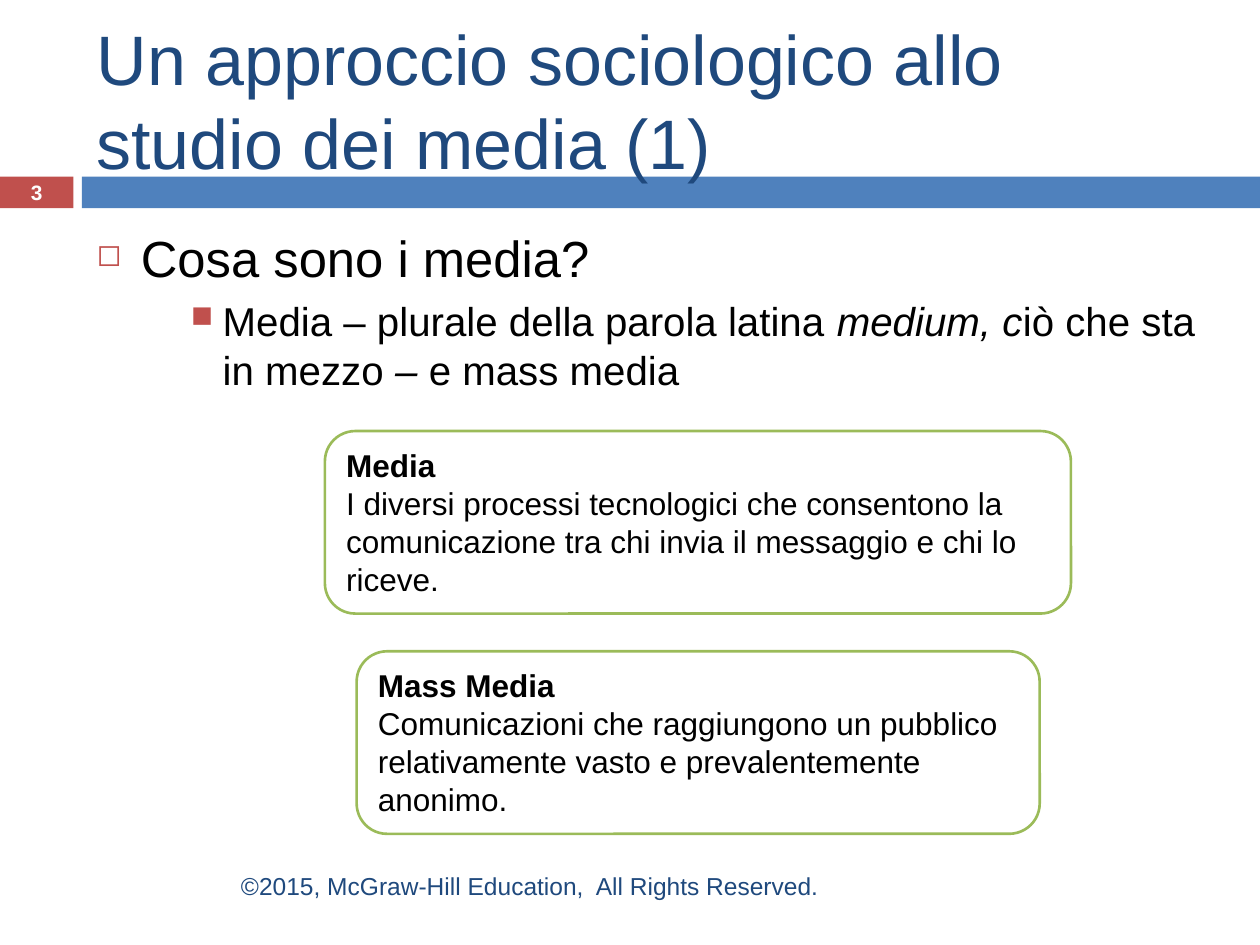
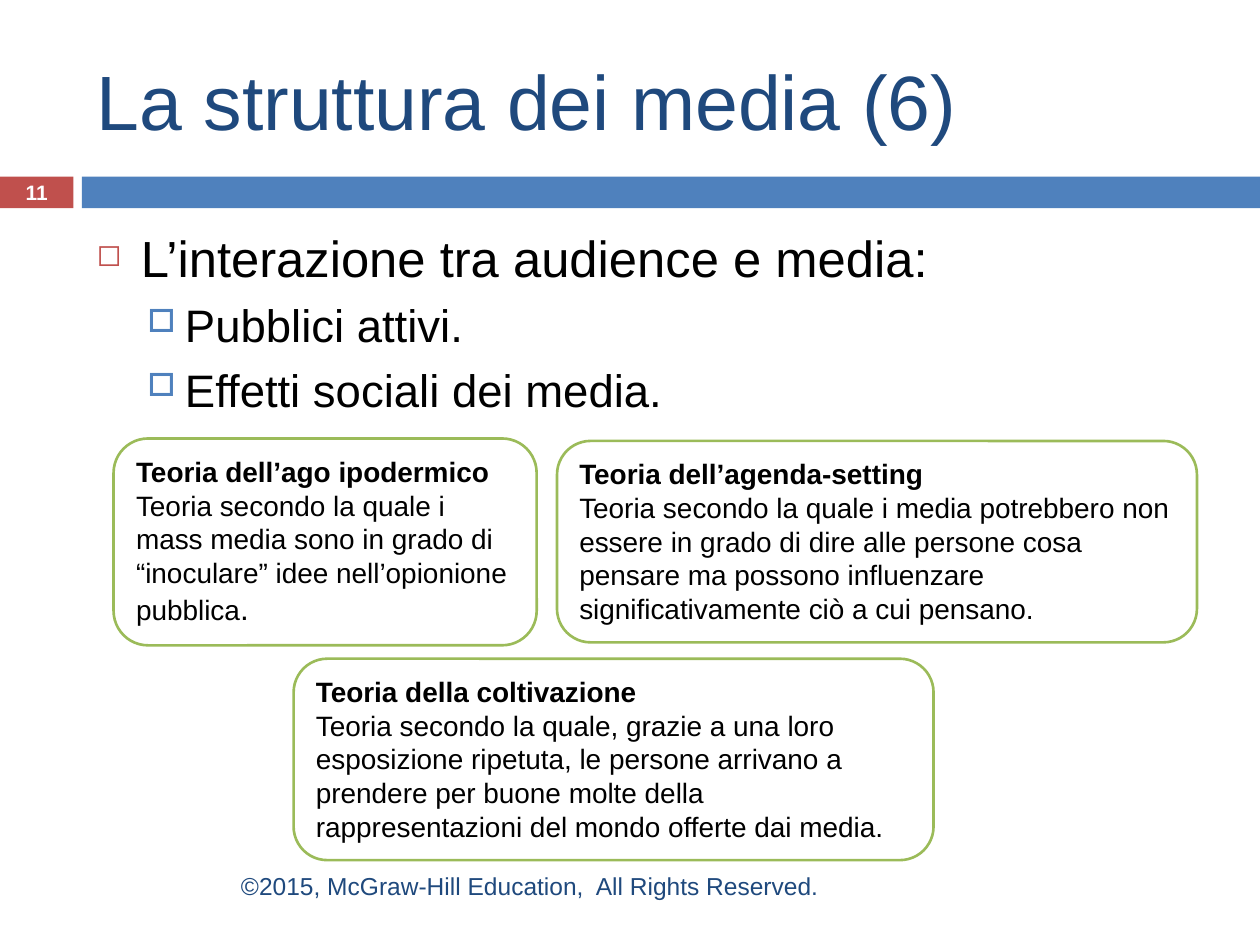
"""Build two lecture slides on the sociology of the media."""
from lxml import etree
from pptx import Presentation
from pptx.dml.color import RGBColor
from pptx.enum.shapes import MSO_SHAPE
from pptx.enum.text import MSO_ANCHOR, MSO_AUTO_SIZE, PP_ALIGN
from pptx.oxml.ns import qn
from pptx.util import Cm, Pt

RECTANGLE, ROUNDED = MSO_SHAPE.RECTANGLE, MSO_SHAPE.ROUNDED_RECTANGLE
TOP, MIDDLE = MSO_ANCHOR.TOP, MSO_ANCHOR.MIDDLE
LEFT, CENTER, RIGHT = PP_ALIGN.LEFT, PP_ALIGN.CENTER, PP_ALIGN.RIGHT
FIT_SHAPE, FIT_NONE = MSO_AUTO_SIZE.SHAPE_TO_FIT_TEXT, MSO_AUTO_SIZE.NONE

FONT = "Arial"
COLORS = {
    "title": "1F497D",
    "text": "000000",
    "white": "FFFFFF",
    "red": "C0504D",
    "blue": "4F81BD",
    "green": "9BBB59",
}
FOOTER = "©2015, McGraw-Hill Education,  All Rights Reserved."

SLIDE_SIZE = (25.4, 19.05)
BANDS = [("red", (0, 3.56, 1.48, 0.64)), ("blue", (1.65, 3.56, 23.75, 0.64))]
TITLE_BOX = (1.7, 0.64, 22.66, 2.74)
BODY_BOX = (1.7, 4.45, 22.66, 12.5)
NUMBER_BOX = (0, 3.53, 1.48, 0.69)
FOOTER_BOX = (1.7, 17.35, 15.06, 1.02)

LEVELS = {
    "main": dict(size=29, margin=0.89, hang=0.89, before=7,
                 bullet="◻", color="red", percent=60),
    "sub": dict(size=26, margin=1.78, hang=0.76, before=5.5,
                bullet="□", color="blue", percent=70),
    "detail": dict(size=23, margin=2.54, hang=0.64, before=5,
                   bullet="■", color="red", percent=75),
}

SLIDES = [
    {
        "number": "3",
        "title": "Un approccio sociologico allo studio dei media (1)",
        "title_size": 40,
        "body": [
            ("main", [("Cosa sono i media?", {})]),
            ("detail", [
                ("Media – plurale della parola latina ", {}),
                ("medium, c", {"italic": True}),
                ("iò che sta in mezzo", {}),
                (" – ", {"italic": True}),
                ("e mass media", {}),
            ]),
        ],
        "card_size": 18,
        "cards": [
            ((6.55, 8.69, 15.04, 3.68), "Media", [
                ("I diversi processi tecnologici che consentono la comunicazione "
                 "tra chi invia il messaggio e chi lo riceve.", {})]),
            ((7.19, 13.13, 13.77, 3.68), "Mass Media", [
                ("Comunicazioni che raggiungono un pubblico relativamente vasto "
                 "e prevalentemente anonimo.", {})]),
        ],
    },
    {
        "number": "11",
        "title": "La struttura dei media (6)",
        "title_size": 44,
        "body": [
            ("main", [("L’interazione tra audience e media:", {})]),
            ("sub", [("Pubblici attivi.", {})]),
            ("sub", [("Effetti sociali dei media.", {})]),
        ],
        "card_size": 16,
        "cards": [
            ((2.29, 8.84, 8.53, 4.17), "Teoria dell’ago ipodermico", [
                ("Teoria secondo la quale i mass media sono in grado di "
                 "“inoculare” idee nell’opionione pubblica", {}),
                (".", {"size": 18})]),
            ((11.23, 8.89, 12.9, 4.06), "Teoria dell’agenda-setting", [
                ("Teoria secondo la quale i media potrebbero non essere in grado "
                 "di dire alle persone cosa pensare ma possono influenzare "
                 "significativamente ciò a cui pensano.", {})]),
            ((5.92, 13.28, 12.9, 4.06), "Teoria della coltivazione", [
                ("Teoria secondo la quale, grazie a una loro esposizione ripetuta, "
                 "le persone arrivano a prendere per buone molte della "
                 "rappresentazioni del mondo offerte dai media.", {})]),
        ],
    },
]


def color(name):
    return RGBColor.from_string(COLORS[name])


def place(box):
    return [Cm(length) for length in box]


def add_run(paragraph, text, size, ink="text", bold=False, italic=False):
    run = paragraph.add_run()
    run.text = text
    font = run.font
    font.name, font.size, font.bold, font.italic = FONT, Pt(size), bold, italic
    font.color.rgb = color(ink)


def add_shape(slide, kind, box, fill, line=None):
    shape = slide.shapes.add_shape(kind, *place(box))
    shape.shadow.inherit = False
    shape.fill.solid()
    shape.fill.fore_color.rgb = color(fill)
    if line:
        shape.line.color.rgb = color(line)
        shape.line.width = Pt(1.5)
    else:
        shape.line.fill.background()
    return shape


def add_text_box(slide, box, anchor=MIDDLE):
    frame = slide.shapes.add_textbox(*place(box)).text_frame
    frame.word_wrap = True
    frame.auto_size = FIT_NONE
    frame.vertical_anchor = anchor
    return frame


def add_label(slide, box, text, size, ink, align=LEFT, bold=False):
    paragraph = add_text_box(slide, box).paragraphs[0]
    paragraph.alignment = align
    add_run(paragraph, text, size, ink, bold)


def next_paragraph(frame, index):
    return frame.add_paragraph() if index else frame.paragraphs[0]


def set_bullet(paragraph, level):
    properties = paragraph._p.get_or_add_pPr()
    properties.set("marL", str(Cm(level["margin"])))
    properties.set("indent", str(-Cm(level["hang"])))
    bullet_color = etree.SubElement(properties, qn("a:buClr"))
    etree.SubElement(bullet_color, qn("a:srgbClr"), val=COLORS[level["color"]])
    etree.SubElement(properties, qn("a:buSzPct"), val=str(level["percent"] * 1000))
    etree.SubElement(properties, qn("a:buChar"), char=level["bullet"])


def add_body(slide, items):
    frame = add_text_box(slide, BODY_BOX, TOP)
    for index, (level_name, runs) in enumerate(items):
        level = LEVELS[level_name]
        paragraph = next_paragraph(frame, index)
        set_bullet(paragraph, level)
        if index:
            paragraph.space_before = Pt(level["before"])
        for text, style in runs:
            add_run(paragraph, text, level["size"], **style)


def add_card(slide, box, heading, runs, size):
    frame = add_shape(slide, ROUNDED, box, "white", "green").text_frame
    frame.word_wrap = True
    frame.auto_size = FIT_SHAPE
    frame.vertical_anchor = TOP
    for index, line in enumerate([[(heading, {"bold": True})], runs]):
        paragraph = next_paragraph(frame, index)
        paragraph.alignment = LEFT
        for text, style in line:
            add_run(paragraph, text, **{"size": size, **style})


def build_slide(presentation, content):
    slide = presentation.slides.add_slide(presentation.slide_layouts[6])
    for fill, box in BANDS:
        add_shape(slide, RECTANGLE, box, fill)
    add_label(slide, TITLE_BOX, content["title"], content["title_size"], "title")
    add_body(slide, content["body"])
    add_label(slide, NUMBER_BOX, content["number"], 11.9, "white", CENTER, True)
    for box, heading, runs in content["cards"]:
        add_card(slide, box, heading, runs, content["card_size"])
    add_label(slide, FOOTER_BOX, FOOTER, 14, "title", RIGHT)


def main():
    presentation = Presentation()
    presentation.slide_width, presentation.slide_height = place(SLIDE_SIZE)
    for content in SLIDES:
        build_slide(presentation, content)
    presentation.save("out.pptx")


if __name__ == "__main__":
    main()
